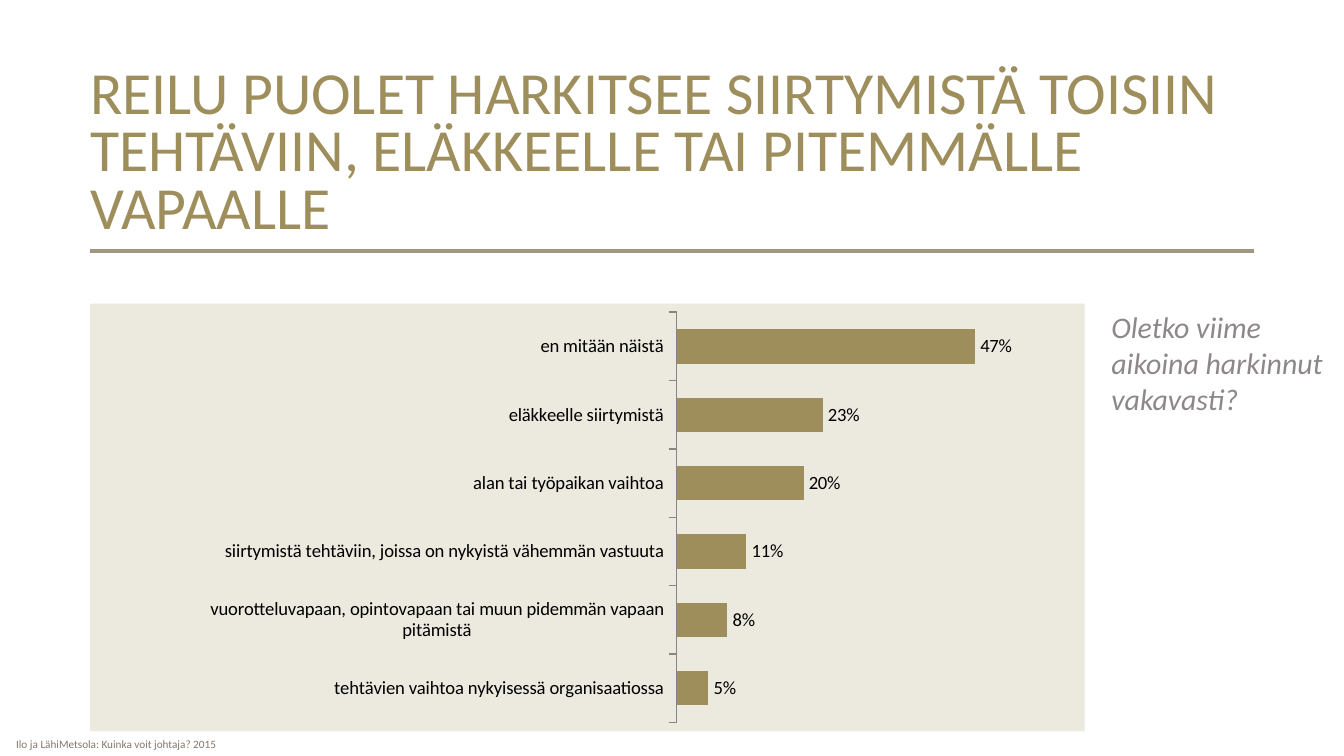
from lxml import etree
from pptx import Presentation
from pptx.chart.data import CategoryChartData
from pptx.dml.color import RGBColor
from pptx.enum import chart as charts, shapes, text
from pptx.oxml import parse_xml
from pptx.oxml.ns import nsdecls, qn
from pptx.util import Inches, Pt

TITLE = "REILU PUOLET HARKITSEE SIIRTYMISTÄ TOISIIN TEHTÄVIIN, ELÄKKEELLE TAI PITEMMÄLLE VAPAALLE"
QUESTION = "Oletko viime aikoina harkinnut vakavasti?"
SOURCE = "Ilo ja LähiMetsola: Kuinka voit johtaja? 2015"
ANSWERS = [  # bottom bar first
    ("tehtävien vaihtoa nykyisessä organisaatiossa", 0.05),
    ("vuorotteluvapaan, opintovapaan tai muun pidemmän vapaan pitämistä", 0.08),
    ("siirtymistä tehtäviin, joissa on nykyistä vähemmän vastuuta", 0.11),
    ("alan tai työpaikan vaihtoa", 0.20),
    ("eläkkeelle siirtymistä", 0.23),
    ("en mitään näistä", 0.47),
]

FONT = "Calibri"
GOLD = RGBColor(0x9E, 0x8E, 0x5C)
RULE = RGBColor(0xA0, 0x97, 0x81)
PANEL = RGBColor(0xEC, 0xE9, 0xDE)
GREY = RGBColor(0x8D, 0x87, 0x8B)
BROWN = RGBColor(0x85, 0x77, 0x6D)
AXIS = RGBColor(0x86, 0x86, 0x86)
BLACK = RGBColor(0, 0, 0)

SLIDE_WIDTH = Inches(10)
SLIDE_HEIGHT = SLIDE_WIDTH * 9 // 16
MARGIN, CONTENT_WIDTH = 0.67, 8.66
BODY_TOP, BODY_HEIGHT = 2.26, 3.18
PLOT_AREA = {"x": 0.59, "y": 0.02, "w": 0.39, "h": 0.96}  # shares of the chart


def add_text(slide, box, content, size, color, anchor, inset=0, italic=None, spacing=None):
    shape = slide.shapes.add_textbox(*map(Inches, box))
    frame = shape.text_frame
    frame.word_wrap = True
    frame.vertical_anchor = anchor
    frame.margin_left = frame.margin_right = Inches(inset)
    frame.margin_top = frame.margin_bottom = Inches(inset)
    paragraph = frame.paragraphs[0]
    paragraph.line_spacing = spacing
    run = paragraph.add_run()
    run.text = content
    run.font.name = FONT
    run.font.size = Pt(size)
    run.font.italic = italic
    run.font.color.rgb = color


def add_rule(slide, left, right, y):
    line = slide.shapes.add_connector(
        shapes.MSO_CONNECTOR.STRAIGHT, Inches(left), Inches(y), Inches(right), Inches(y))
    line.line.color.rgb = RULE
    line.line.width = Pt(2)
    etree.SubElement(line._element.spPr, qn("a:effectLst"))


def add_panel(slide, box):
    panel = slide.shapes.add_shape(shapes.MSO_SHAPE.RECTANGLE, *map(Inches, box))
    panel.shadow.inherit = False
    panel.fill.solid()
    panel.fill.fore_color.rgb = PANEL
    panel.line.fill.background()


def place_plot(chart):
    """Fix the inner plot area, which leaves the rest to the category labels."""
    plot_area = chart._chartSpace.chart.plotArea
    for old in plot_area.findall(qn("c:layout")):
        plot_area.remove(old)
    places = "".join(f'<c:{key} val="{value}"/>' for key, value in PLOT_AREA.items())
    plot_area.insert(0, parse_xml(
        f'<c:layout {nsdecls("c")}><c:manualLayout><c:layoutTarget val="inner"/>'
        f'<c:xMode val="edge"/><c:yMode val="edge"/>{places}</c:manualLayout></c:layout>'))


def add_bar_chart(slide, box):
    data = CategoryChartData(number_format="0%")
    data.categories = [answer for answer, _ in ANSWERS]
    data.add_series("Series 1", [share for _, share in ANSWERS])
    chart = slide.shapes.add_chart(
        charts.XL_CHART_TYPE.BAR_CLUSTERED, *map(Inches, box), data).chart
    chart.has_legend = False
    chart.has_title = False
    chart.font.name = FONT
    chart.font.size = Pt(10)
    chart.font.color.rgb = BLACK

    category_axis = chart.category_axis
    category_axis.major_tick_mark = charts.XL_TICK_MARK.OUTSIDE
    category_axis.format.line.color.rgb = AXIS
    value_axis = chart.value_axis
    value_axis.minimum_scale, value_axis.maximum_scale = 0, 0.5
    value_axis.has_major_gridlines = False
    value_axis.visible = False

    plot = chart.plots[0]
    plot.gap_width = 100
    plot.vary_by_categories = False
    bars = plot.series[0]
    bars.format.fill.solid()
    bars.format.fill.fore_color.rgb = GOLD
    labels = bars.data_labels
    labels.show_value = True
    labels.number_format = "0%"
    labels.number_format_is_linked = False
    labels.position = charts.XL_LABEL_POSITION.OUTSIDE_END
    place_plot(chart)


def main():
    presentation = Presentation()
    presentation.slide_width = SLIDE_WIDTH
    presentation.slide_height = SLIDE_HEIGHT
    slide = presentation.slides.add_slide(presentation.slide_layouts[6])

    add_rule(slide, MARGIN, MARGIN + CONTENT_WIDTH, 1.87)
    add_panel(slide, (MARGIN, BODY_TOP, 7.4, BODY_HEIGHT))
    add_text(slide, (MARGIN, 0.29, CONTENT_WIDTH, 1.5), TITLE, 32, GOLD,
             text.MSO_ANCHOR.BOTTOM, spacing=0.8)
    add_text(slide, (8.23, BODY_TOP, 1.67, 1.43), QUESTION, 16, GREY,
             text.MSO_ANCHOR.TOP, inset=0.04, italic=True)
    add_bar_chart(slide, (1.46, BODY_TOP, 6.07, BODY_HEIGHT))
    add_text(slide, (0.12, 5.46, 6.15, 0.16), SOURCE, 6, BROWN, text.MSO_ANCHOR.MIDDLE)

    presentation.save("out.pptx")


if __name__ == "__main__":
    main()
